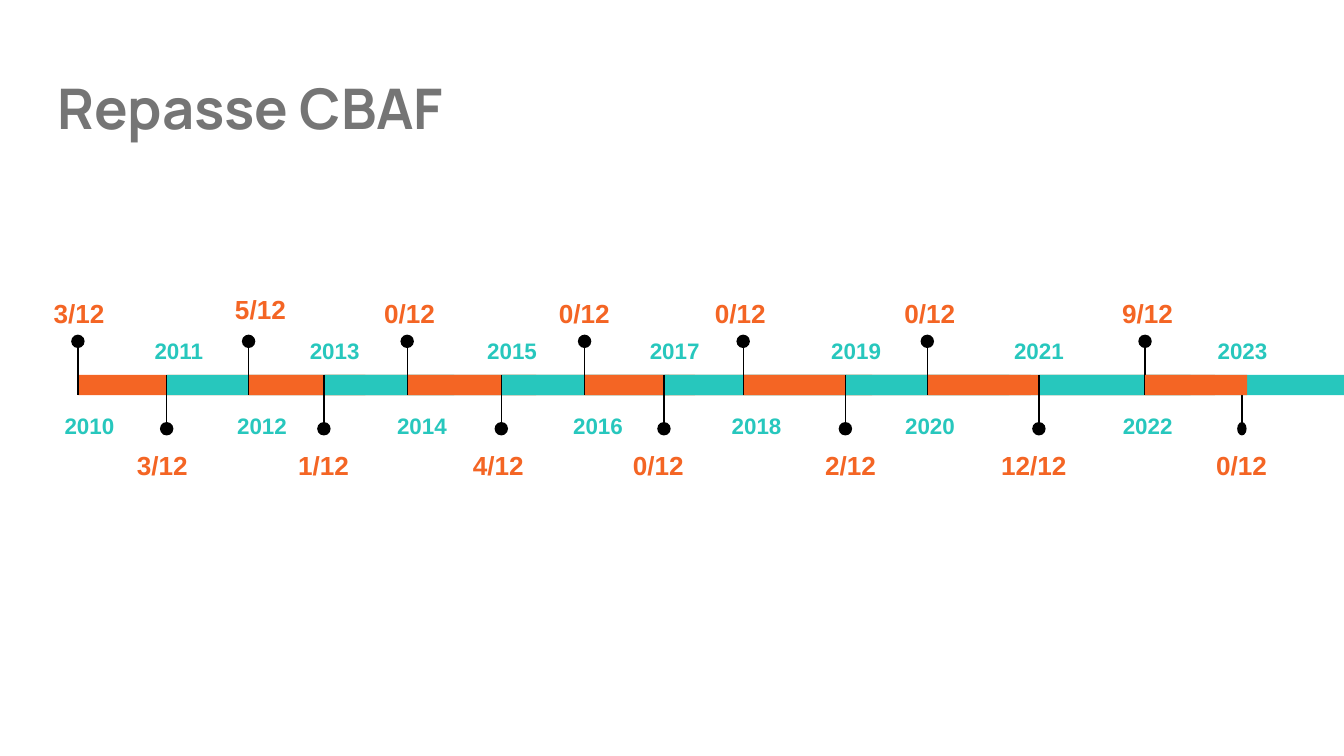
from collections import namedtuple

from lxml import etree
from pptx import Presentation
from pptx import util as u
from pptx.dml.color import RGBColor
from pptx.enum import shapes, text
from pptx.oxml.ns import qn

ORANGE, TEAL, BLACK, GREY = "F46524", "27C7BD", "000000", "757575"
BAR_TOP, BAR_HEIGHT = 2.79, 0.15
DOT = 0.1

# Rows of the timeline, on either side of the bar
Side = namedtuple("Side", "pin_start pin_end dot_top year_top value_top")
ABOVE = Side(2.55, 2.94, 2.49, 2.94, 2.11)
BELOW = Side(3.19, 2.79, 3.14, 2.38, 3.24)

# Left and width of each label, in inches
Milestone = namedtuple(
    "Milestone", "year pin bar_width year_left year_width value value_left value_width")
MILESTONES = [Milestone(*row) for row in (
    (2010, 0.58, 2.14, 0.19, 0.95, "3/12", 0.30, 0.95),
    (2011, 1.24, 2.14, 0.92, 0.82, "3/12", 0.92, 0.95),
    (2012, 1.85, 2.14, 1.57, 0.76, "5/12", 1.65, 0.59),
    (2013, 2.41, 2.57, 2.08, 0.82, "1/12", 2.12, 0.59),
    (2014, 3.03, 2.14, 2.76, 0.76, "0/12", 2.76, 0.59),
    (2015, 3.73, 2.57, 3.40, 0.82, "4/12", 3.42, 0.59),
    (2016, 4.35, 2.14, 4.07, 0.76, "0/12", 4.06, 0.59),
    (2017, 4.94, 2.57, 4.61, 0.82, "0/12", 4.61, 0.59),
    (2018, 5.53, 2.14, 5.25, 0.76, "0/12", 5.22, 0.59),
    (2019, 6.29, 2.57, 5.96, 0.82, "2/12", 6.04, 0.59),
    (2020, 6.90, 2.14, 6.54, 0.76, "0/12", 6.63, 0.59),
    (2021, 7.73, 2.57, 7.32, 0.82, "12/12", 7.35, 0.76),
    (2022, 8.52, 0.76, 8.16, 0.76, "9/12", 8.25, 0.59),
    (2023, 9.24, None, 8.95, 0.59, "0/12", 8.95, 0.59),
)]


def color(hex_code):
    return RGBColor.from_string(hex_code)


def inches(*lengths):
    return [u.Inches(length) for length in lengths]


def style_frame(frame, size, font, hex_code):
    frame.word_wrap = True
    frame.margin_left = frame.margin_right = u.Inches(0.1)
    frame.margin_top = frame.margin_bottom = u.Inches(0.1)
    for span in frame.paragraphs[0].runs:
        span.font.size = u.Pt(size)
        span.font.name = font
        span.font.bold = True
        span.font.color.rgb = color(hex_code)


def add_title(slide, wording):
    title = slide.shapes.title
    title.left, title.top, title.width, title.height = inches(0.33, 0.45, 9.32, 0.7)
    frame = title.text_frame
    frame.text = wording
    frame.vertical_anchor = text.MSO_ANCHOR.MIDDLE
    frame.paragraphs[0].alignment = text.PP_ALIGN.LEFT
    style_frame(frame, 30, "Manrope", GREY)


def add_solid(timeline, kind, hex_code, *place):
    solid = timeline.shapes.add_shape(kind, *inches(*place))
    solid.shadow.inherit = False
    solid.fill.solid()
    solid.fill.fore_color.rgb = color(hex_code)
    solid.line.fill.background()
    return solid


def add_bar(timeline, milestone):
    hex_code = TEAL if milestone.year % 2 else ORANGE
    add_solid(timeline, shapes.MSO_SHAPE.RECTANGLE, hex_code,
              milestone.pin, BAR_TOP, milestone.bar_width, BAR_HEIGHT)


def add_pin(timeline, x, side, dot_width):
    pin = timeline.shapes.add_connector(
        shapes.MSO_CONNECTOR.STRAIGHT, *inches(x, side.pin_start, x, side.pin_end))
    pin.line.color.rgb = color(BLACK)
    pin.line.width = u.Pt(0.75)
    etree.SubElement(pin._element.spPr, qn("a:effectLst"))
    dot = add_solid(timeline, shapes.MSO_SHAPE.OVAL, BLACK,
                    x - dot_width / 2, side.dot_top, dot_width, DOT)
    dot.rotation = 180 if side is BELOW else 0


def add_label(timeline, wording, size, hex_code, *place):
    box = timeline.shapes.add_textbox(*inches(*place))
    box.text_frame.text = wording
    style_frame(box.text_frame, size, "Arial", hex_code)
    return box.text_frame.paragraphs[0]


def add_milestone(timeline, milestone):
    """Add the pin, the year and the value; odd years point down."""
    side = BELOW if milestone.year % 2 else ABOVE
    add_pin(timeline, milestone.pin, side, 0.07 if milestone.year == 2023 else DOT)
    para = add_label(timeline, str(milestone.year), 12, TEAL,
                     milestone.year_left, side.year_top, milestone.year_width, 0.41)
    para.alignment = text.PP_ALIGN.CENTER
    para.line_spacing = 1.15
    para.space_after = u.Pt(16)
    value_top = 2.08 if milestone.year == 2012 else side.value_top
    add_label(timeline, milestone.value, 14, ORANGE,
              milestone.value_left, value_top, milestone.value_width, 0.31)


def main():
    deck = Presentation()
    deck.slide_width = u.Inches(10)
    deck.slide_height = deck.slide_width * 9 // 16
    slide = deck.slides.add_slide(deck.slide_layouts[5])
    add_title(slide, "Repasse CBAF")

    timeline = slide.shapes.add_group_shape()
    *earlier_bars, last_bar = [m for m in MILESTONES if m.bar_width]
    for milestone in earlier_bars:
        add_bar(timeline, milestone)
    for milestone in MILESTONES:
        add_milestone(timeline, milestone)
    add_bar(timeline, last_bar)  # lies over the last two pins
    deck.save("out.pptx")


if __name__ == "__main__":
    main()
